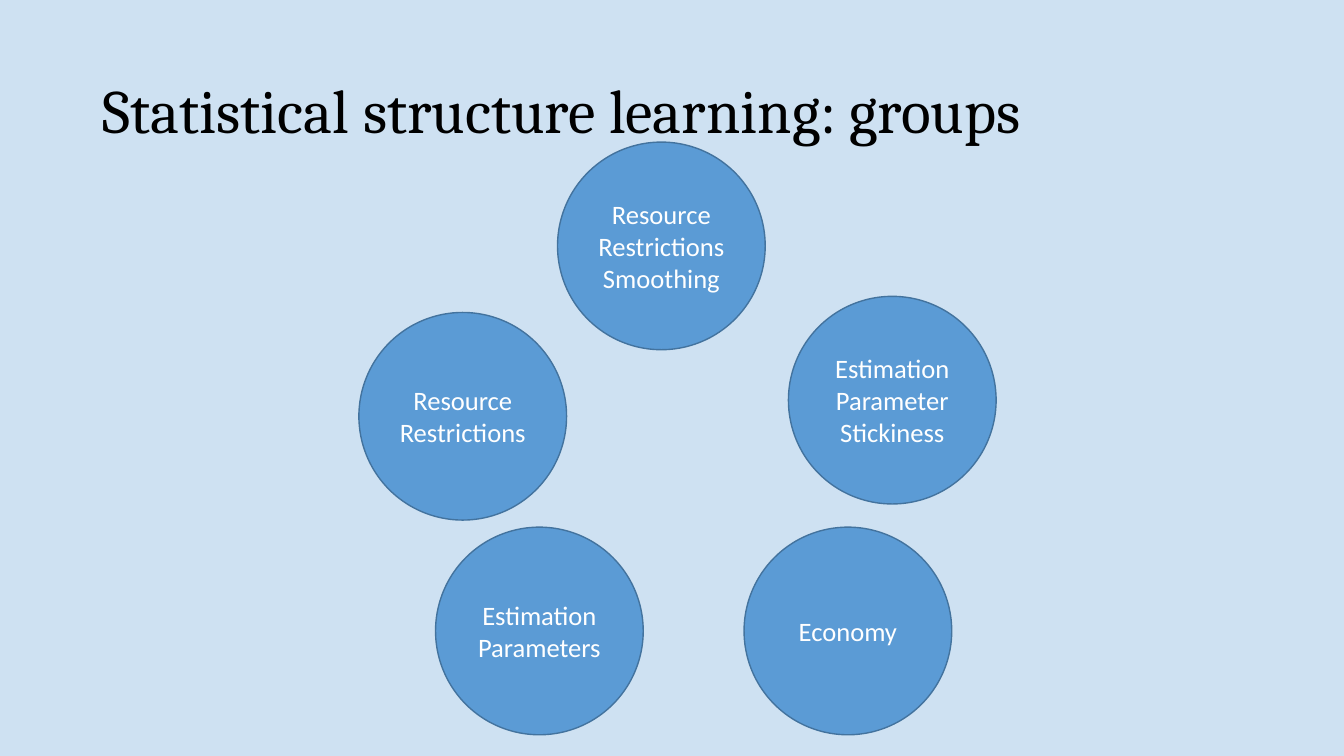
from pptx import Presentation
from pptx.dml.color import RGBColor
from pptx.enum.shapes import MSO_SHAPE
from pptx.enum.text import MSO_ANCHOR, PP_ALIGN
from pptx.util import Inches, Pt


def color(code):
    return RGBColor.from_string(code)


def write(shape, text, font="Calibri", size=19, fill="FFFFFF",
          align=PP_ALIGN.CENTER, pad=0.05, lines=1.0):
    """Put formatted, vertically centred text into a shape; pad is in inches."""
    frame = shape.text_frame
    frame.word_wrap = True
    frame.vertical_anchor = MSO_ANCHOR.MIDDLE
    frame.margin_left = frame.margin_right = Inches(pad)
    para = frame.paragraphs[0]
    para.text = text
    para.alignment = align
    para.line_spacing = lines
    para.font.name = font
    para.font.size = Pt(size)
    para.font.color.rgb = color(fill)


deck = Presentation()
deck.slide_width = Inches(13.33)
deck.slide_height = Inches(7.5)
slide = deck.slides.add_slide(deck.slide_layouts[6])
back = slide.background.fill
back.solid()
back.fore_color.rgb = color("CEE1F2")

title = slide.shapes.add_textbox(Inches(0.92), Inches(0.4), Inches(11.5), Inches(1.45))
write(title, "Statistical structure learning: groups", font="Cambria", size=44,
      fill="000000", align=PP_ALIGN.LEFT, pad=0.1, lines=0.9)

size = Inches(2.06)
groups = [
    ("Resource Restrictions Smoothing", 5.53, 1.41),
    ("Resource Restrictions", 3.56, 3.1),
    ("Estimation Parameters", 4.32, 5.23),
    ("Estimation Parameter Stickiness", 7.82, 2.94),
    ("Economy", 7.38, 5.23),
]
for name, left, top in groups:
    disc = slide.shapes.add_shape(MSO_SHAPE.OVAL, Inches(left), Inches(top), size, size)
    disc.shadow.inherit = False
    disc.fill.solid()
    disc.fill.fore_color.rgb = color("5B9BD5")
    disc.line.color.rgb = color("43739E")
    disc.line.width = Pt(1)
    write(disc, name)

deck.save("out.pptx")
